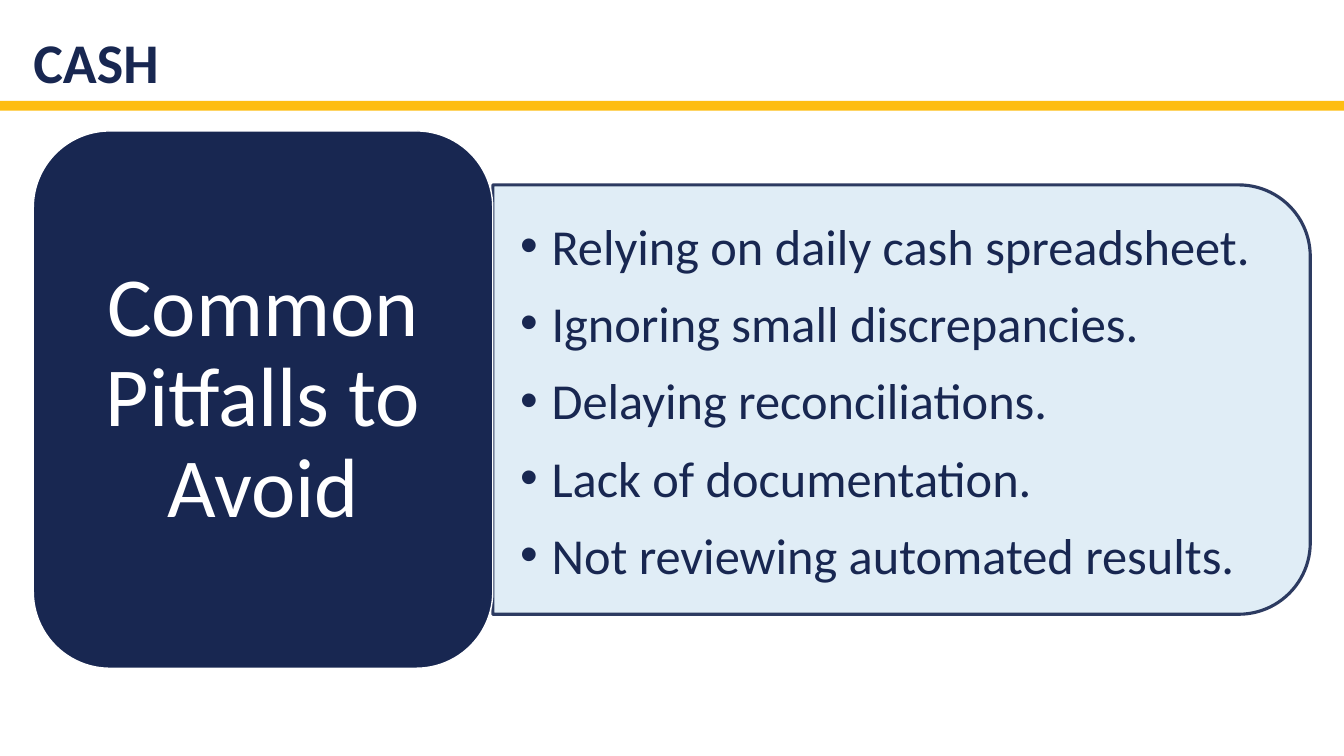
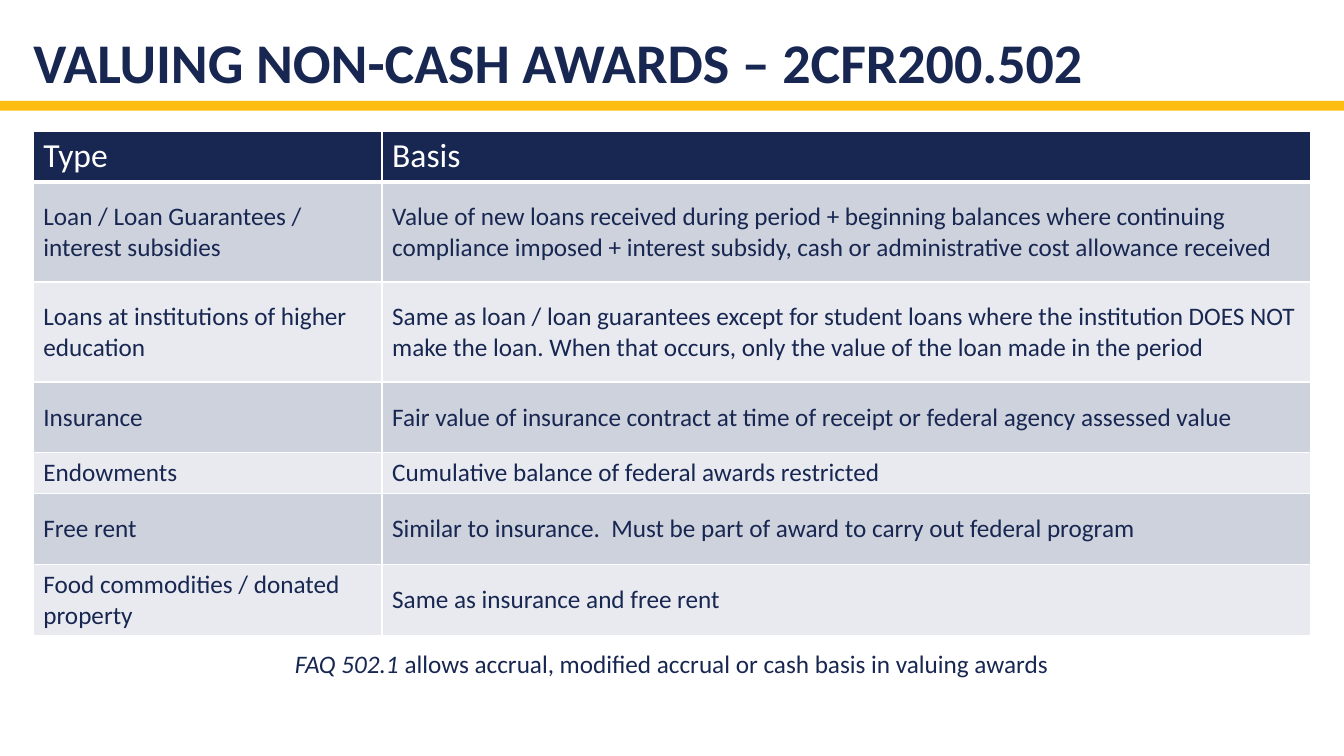
from lxml import etree
from pptx import Presentation
from pptx.dml.color import RGBColor
from pptx.enum.shapes import MSO_SHAPE
from pptx.enum.text import MSO_ANCHOR, MSO_AUTO_SIZE, PP_ALIGN
from pptx.oxml.ns import qn
from pptx.util import Cm, Pt

NAVY = RGBColor(0x18, 0x27, 0x51)
GOLD = RGBColor(0xFE, 0xBD, 0x11)
PALE_BLUE = RGBColor(0xDD, 0xEC, 0xF6)
ROW_DARK = RGBColor(0xCE, 0xD2, 0xDD)
ROW_LIGHT = RGBColor(0xE8, 0xEA, 0xEF)
WHITE = RGBColor(0xFF, 0xFF, 0xFF)

FONT = "Calibri"
RECTANGLE = MSO_SHAPE.RECTANGLE
ROUNDED = MSO_SHAPE.ROUNDED_RECTANGLE
ROUNDED_TOP = MSO_SHAPE.ROUND_2_SAME_RECTANGLE
MIDDLE = MSO_ANCHOR.MIDDLE
BOTTOM = MSO_ANCHOR.BOTTOM
LEFT = PP_ALIGN.LEFT
CENTER = PP_ALIGN.CENTER
NO_AUTOFIT = MSO_AUTO_SIZE.NONE

SLIDE_WIDTH, SLIDE_HEIGHT = Cm(33.87), Cm(19.05)
MARGIN = Cm(0.84)
BAND_TOP, BAND_HEIGHT = Cm(2.54), Cm(0.25)
CONTENT_TOP = Cm(3.3)
CONTENT_WIDTH = Cm(32.2)

PITFALLS = [
    "Relying on daily cash spreadsheet.",
    "Ignoring small discrepancies.",
    "Delaying reconciliations.",
    "Lack of documentation.",
    "Not reviewing automated results.",
]

AWARD_ROWS = [
    (1.27, "Type", "Basis"),
    (2.52, "Loan / Loan Guarantees / interest subsidies",
     "Value of new loans received during period + beginning balances where continuing "
     "compliance imposed + interest subsidy, cash or administrative cost allowance received"),
    (2.52, "Loans at institutions of higher education",
     "Same as loan / loan guarantees except for student loans where the institution DOES NOT "
     "make the loan. When that occurs, only the value of the loan made in the period"),
    (1.78, "Insurance",
     "Fair value of insurance contract at time of receipt or federal agency assessed value"),
    (1.02, "Endowments", "Cumulative balance of federal awards restricted"),
    (1.78, "Free rent",
     "Similar to insurance.  Must be part of award to carry out federal program"),
    (1.78, "Food commodities / donated property", "Same as insurance and free rent"),
]


def format_text(paragraph, size, color, bold=False):
    for run in paragraph.runs:
        run.font.name = FONT
        run.font.size = Pt(size)
        run.font.bold = bold
        run.font.color.rgb = color


def set_insets(text_frame, horizontal, vertical):
    text_frame.margin_left = text_frame.margin_right = horizontal
    text_frame.margin_top = text_frame.margin_bottom = vertical


def add_filled_shape(slide, kind, box, fill):
    shape = slide.shapes.add_shape(kind, *box)
    shape.shadow.inherit = False
    shape.fill.solid()
    shape.fill.fore_color.rgb = fill
    shape.line.fill.background()
    return shape


def set_opacity(shape, percent):
    for color in shape.element.spPr.iter(qn("a:srgbClr")):
        etree.SubElement(color, qn("a:alpha"), val=str(percent * 1000))


def add_bullet(paragraph, indent):
    properties = paragraph._p.get_or_add_pPr()
    properties.set("marL", str(indent))
    properties.set("indent", str(-indent))
    etree.SubElement(properties, qn("a:buFont"), typeface="Arial")
    etree.SubElement(properties, qn("a:buChar"), char="•")


def add_cell_borders(cell, bottom_width):
    properties = cell._tc.get_or_add_tcPr()
    for side, width in (("lnL", 1), ("lnR", 1), ("lnT", 1), ("lnB", bottom_width)):
        line = etree.SubElement(properties, qn(f"a:{side}"), w=str(Pt(width)))
        fill = etree.SubElement(line, qn("a:solidFill"))
        etree.SubElement(fill, qn("a:srgbClr"), val=str(WHITE))


def add_layout_band(layout, slide):
    for placeholder in list(layout.placeholders)[1:]:
        layout.shapes.element.remove(placeholder.element)
    band = add_filled_shape(slide, RECTANGLE, (0, BAND_TOP, SLIDE_WIDTH, BAND_HEIGHT), GOLD)
    layout.shapes.element.append(band.element)


def set_title(slide, text):
    title = slide.shapes.title
    title.left, title.top, title.width, title.height = MARGIN, 0, Cm(32.18), BAND_TOP
    text_frame = title.text_frame
    text_frame.text = text
    text_frame.auto_size = NO_AUTOFIT
    text_frame.vertical_anchor = BOTTOM
    set_insets(text_frame, 0, Cm(0.13))
    paragraph = text_frame.paragraphs[0]
    paragraph.alignment = LEFT
    paragraph.line_spacing = 0.9
    format_text(paragraph, 40, NAVY, bold=True)


def add_bullet_panel(slide, box, items):
    left, top, width, height = box
    turned_box = (left + (width - height) // 2, top + (height - width) // 2, height, width)
    panel = add_filled_shape(slide, ROUNDED_TOP, turned_box, PALE_BLUE)
    panel.rotation = 90
    panel.line.color.rgb = NAVY
    panel.line.width = Pt(2.25)
    set_opacity(panel, 90)

    inset = Cm(0.52)
    textbox = slide.shapes.add_textbox(left, top + inset, width - inset, height - 2 * inset)
    text_frame = textbox.text_frame
    text_frame.word_wrap = True
    text_frame.vertical_anchor = MIDDLE
    set_insets(text_frame, Cm(0.69), Cm(0.36))
    text_frame.text = "\n".join(items)
    for paragraph in text_frame.paragraphs:
        paragraph.space_after = Pt(12)
        add_bullet(paragraph, Cm(0.79))
        format_text(paragraph, 36, NAVY)


def add_heading_tile(slide, box, text):
    tile = add_filled_shape(slide, ROUNDED, box, NAVY)
    tile.line.color.rgb = WHITE
    tile.line.width = Pt(1)
    text_frame = tile.text_frame
    text_frame.word_wrap = True
    text_frame.vertical_anchor = MIDDLE
    set_insets(text_frame, Cm(0.64), Cm(0.3))
    text_frame.text = text
    paragraph = text_frame.paragraphs[0]
    paragraph.alignment = CENTER
    paragraph.line_spacing = 0.9
    format_text(paragraph, 60, WHITE)


def add_award_table(slide, left, top, width, rows):
    height = Cm(sum(row[0] for row in rows))
    table = slide.shapes.add_table(len(rows), 2, left, top, width, height).table
    table.columns[0].width = Cm(8.79)
    table.columns[1].width = width - Cm(8.79)
    for index, (row_height, *texts) in enumerate(rows):
        table.rows[index].height = Cm(row_height)
        is_header = index == 0
        band_fill = ROW_DARK if index % 2 else ROW_LIGHT
        for cell, text in zip(table.rows[index].cells, texts):
            add_cell_borders(cell, 3 if is_header else 1)
            cell.fill.solid()
            cell.fill.fore_color.rgb = NAVY if is_header else band_fill
            cell.text = text
            paragraph = cell.text_frame.paragraphs[0]
            if is_header:
                format_text(paragraph, 24, WHITE)
            else:
                cell.vertical_anchor = MIDDLE
                format_text(paragraph, 18, NAVY)


def add_footnote(slide, box, source, statement):
    text_frame = slide.shapes.add_textbox(*box).text_frame
    text_frame.word_wrap = True
    paragraph = text_frame.paragraphs[0]
    paragraph.alignment = CENTER
    for text, italic in ((source, True), (statement, False)):
        run = paragraph.add_run()
        run.text = text
        run.font.italic = italic
    format_text(paragraph, 18, NAVY)


def build_pitfalls_slide(slide):
    set_title(slide, "CASH")
    tile_width, tile_height = Cm(11.58), Cm(13.54)
    panel_height = Cm(10.82)
    panel_top = CONTENT_TOP + (tile_height - panel_height) // 2
    panel_box = (MARGIN + tile_width, panel_top, Cm(20.6), panel_height)
    add_bullet_panel(slide, panel_box, PITFALLS)
    tile_box = (MARGIN, CONTENT_TOP, tile_width, tile_height)
    add_heading_tile(slide, tile_box, "Common Pitfalls to Avoid")


def build_awards_slide(slide):
    set_title(slide, "VALUING NON-CASH AWARDS – 2CFR200.502")
    add_award_table(slide, MARGIN, CONTENT_TOP, CONTENT_WIDTH, AWARD_ROWS)
    add_footnote(slide, (Cm(4.9), Cm(16.2), Cm(24.05), Cm(1.03)), "FAQ 502.1",
                 " allows accrual, modified accrual or cash basis in valuing awards")


def main():
    presentation = Presentation()
    presentation.slide_width = SLIDE_WIDTH
    presentation.slide_height = SLIDE_HEIGHT
    layout = presentation.slide_layouts.get_by_name("Title Only")
    pitfalls_slide = presentation.slides.add_slide(layout)
    add_layout_band(layout, pitfalls_slide)
    build_pitfalls_slide(pitfalls_slide)
    build_awards_slide(presentation.slides.add_slide(layout))
    presentation.save("out.pptx")


if __name__ == "__main__":
    main()
